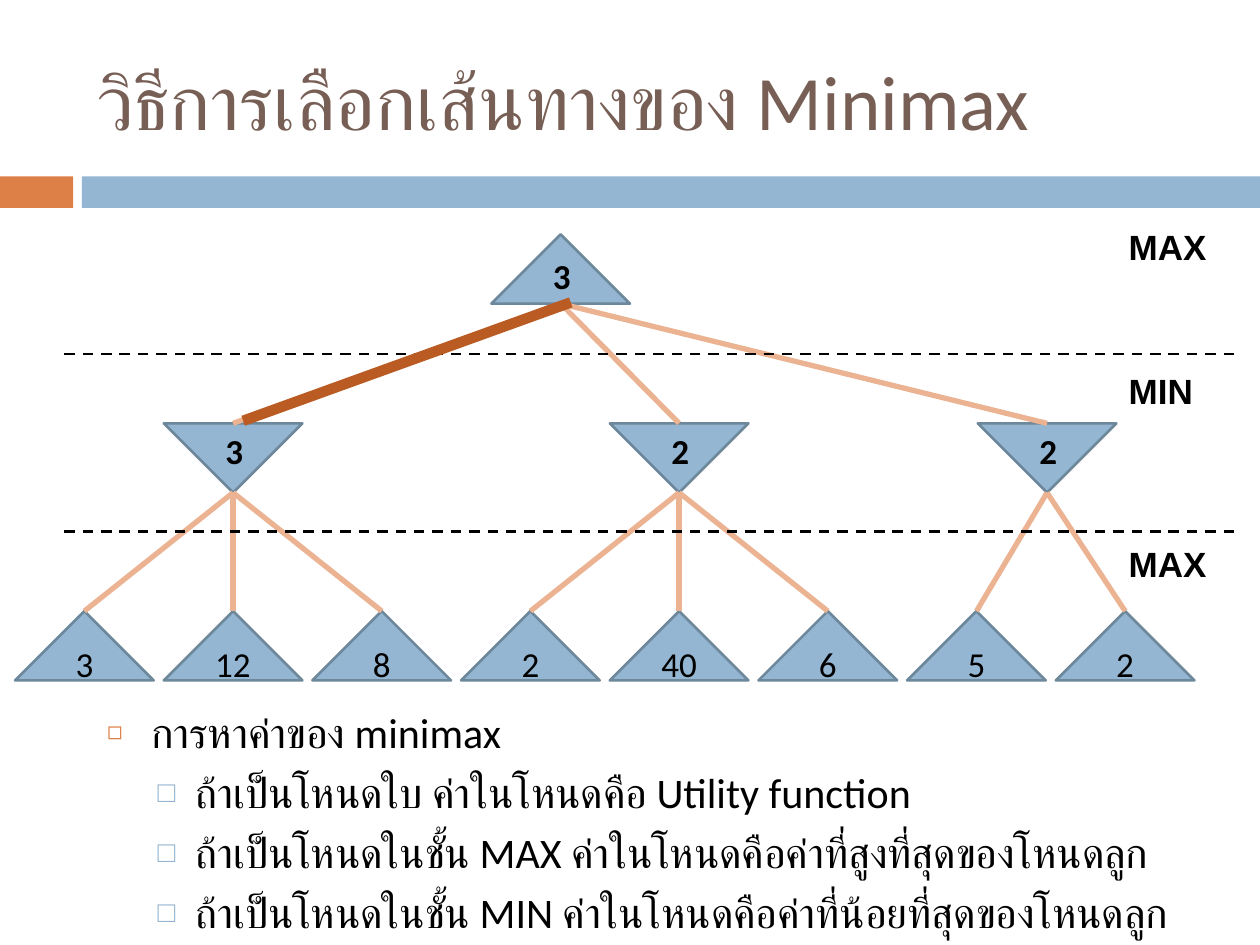
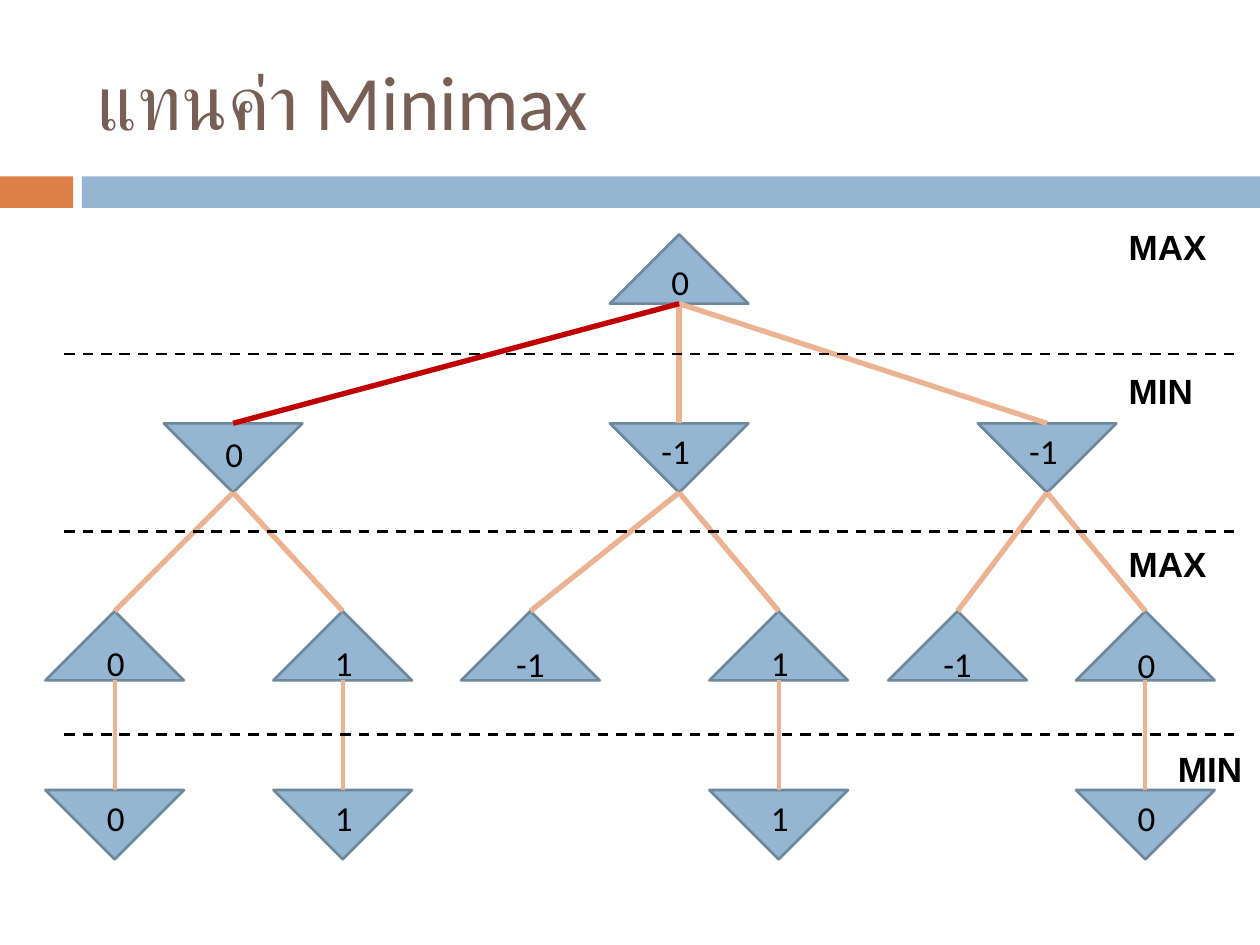
"""Build two slides that show minimax values on game trees."""
from dataclasses import dataclass

from lxml import etree
from pptx import Presentation
from pptx.dml.color import RGBColor
from pptx.enum.dml import MSO_LINE
from pptx.enum.shapes import MSO_CONNECTOR, MSO_SHAPE
from pptx.enum.text import MSO_ANCHOR, MSO_AUTO_SIZE, PP_ALIGN
from pptx.oxml.ns import qn
from pptx.util import Inches, Pt

TRIANGLE, RECTANGLE = MSO_SHAPE.ISOSCELES_TRIANGLE, MSO_SHAPE.RECTANGLE
STRAIGHT, DASH = MSO_CONNECTOR.STRAIGHT, MSO_LINE.DASH
MIDDLE, LEFT, CENTER = MSO_ANCHOR.MIDDLE, PP_ALIGN.LEFT, PP_ALIGN.CENTER
NO_AUTOFIT = MSO_AUTO_SIZE.NONE


@dataclass(frozen=True)
class Theme:
    """Colours, fonts and type sizes."""
    orange: str = "DD8047"
    blue: str = "94B6D2"
    outline: str = "6D879B"
    branch: str = "EBB391"
    brown: str = "775F55"
    black: str = "000000"
    text_font: str = "Calibri"
    label_font: str = "Arial"
    title_size: int = 44
    body_size: int = 24
    label_size: int = 20


theme = Theme()
title_format = {"name": theme.text_font, "size": Pt(theme.title_size), "bold": False}
body_format = {"name": theme.text_font, "size": Pt(theme.body_size)}
value_format = {"name": theme.text_font, "size": Pt(theme.label_size)}
level_format = {"name": theme.label_font, "size": Pt(theme.label_size), "bold": True}


def write(paragraph, text, formats, color=theme.black):
    run = paragraph.add_run()
    run.text = text
    for attribute, value in formats.items():
        setattr(run.font, attribute, value)
    run.font.color.rgb = RGBColor.from_string(color)
    properties = run._r.get_or_add_rPr()
    etree.SubElement(properties, qn("a:cs"), typeface=formats["name"])


def add_line(slide, start, end, color, width, dash=None):
    points = [Inches(length) for length in (*start, *end)]
    connector = slide.shapes.add_connector(STRAIGHT, *points)
    connector.line.color.rgb = RGBColor.from_string(color)
    connector.line.width = Pt(width)
    if dash:
        connector.line.dash_style = dash
    etree.SubElement(connector._element.spPr, qn("a:effectLst"))


NODE_WIDTH, NODE_HEIGHT = 1.1, 0.55
LEVEL_TOPS = [1.86, 3.36, 4.85, 6.27]
LEFT_NODE, MIDDLE_NODE, RIGHT_NODE = 1.85, 5.39, 8.31
LEAF_START, LEAF_STEP = 0.67, 1.18

leaf_values = ["3", "12", "8", "2", "40", "6", "5", "2"]
leaf_parents = [LEFT_NODE] * 3 + [MIDDLE_NODE] * 3 + [RIGHT_NODE] * 2
max_min_max = [("MAX", 8.86, 1.74), ("MIN", 8.86, 2.88), ("MAX", 8.86, 4.26)]

# Each node: level, centre, value, label top (None: inside the triangle), parent centre.
trees = [
    {
        "title": "วิธีการเลือกเส้นทางของ Minimax",
        "layout": 1,
        "bold": True,
        "label_width": 0.39,
        "nodes": [
            (0, 4.45, "3", 1.97, None),
            (1, LEFT_NODE, "3", 3.36, 4.45),
            (1, MIDDLE_NODE, "2", 3.36, 4.45),
            (1, RIGHT_NODE, "2", 3.36, 4.45),
        ] + [
            (2, LEAF_START + index * LEAF_STEP, value, None, parent)
            for index, (value, parent) in enumerate(zip(leaf_values, leaf_parents))
        ],
        "dividers": [2.81, 4.22],
        "levels": max_min_max,
        "chosen": ((4.53, 2.4), (1.93, 3.34), "B95B22", 6),
        "list": [
            (0, "การหาค่าของ minimax"),
            (1, "ถ้าเป็นโหนดใบ ค่าในโหนดคือ Utility function"),
            (1, "ถ้าเป็นโหนดในชั้น MAX ค่าในโหนดคือค่าที่สูงที่สุดของโหนดลูก"),
            (1, "ถ้าเป็นโหนดในชั้น MIN ค่าในโหนดคือค่าที่น้อยที่สุดของโหนดลูก"),
        ],
    },
    {
        "title": "แทนค่า Minimax",
        "layout": 5,
        "bold": False,
        "label_width": 0.55,
        "nodes": [
            (0, MIDDLE_NODE, "0", 2.02, None),
            (1, LEFT_NODE, "0", 3.38, MIDDLE_NODE),
            (1, MIDDLE_NODE, "-1", 3.36, MIDDLE_NODE),
            (1, RIGHT_NODE, "-1", 3.36, MIDDLE_NODE),
            (2, 0.91, "0", 5.04, LEFT_NODE),
            (2, 2.72, "1", 5.04, LEFT_NODE),
            (2, 4.21, "-1", None, MIDDLE_NODE),
            (2, 6.18, "1", 5.04, MIDDLE_NODE),
            (2, 7.6, "-1", None, RIGHT_NODE),
            (2, 9.09, "0", 5.06, RIGHT_NODE),
            (3, 0.91, "0", 6.27, 0.91),
            (3, 2.72, "1", 6.27, 2.72),
            (3, 6.18, "1", 6.27, 6.18),
            (3, 9.09, "0", 6.27, 9.09),
        ],
        "dividers": [2.81, 4.22, 5.83],
        "levels": max_min_max + [("MIN", 9.25, 5.88)],
        "chosen": ((MIDDLE_NODE, 2.41), (LEFT_NODE, 3.36), "C00000", 3),
        "list": [],
    },
]
bullets = [
    {"char": "◻", "color": theme.orange, "size": "60000", "margin": 0.35, "hang": 0.35, "before": 7},
    {"char": "□", "color": theme.blue, "size": "70000", "margin": 0.7, "hang": 0.3, "before": 5.5},
]

presentation = Presentation()
presentation.slide_width, presentation.slide_height = Inches(10), Inches(7.5)
master = presentation.slide_master
master_title = master.placeholders[0]
for attribute, length in {"left": 0.67, "top": 0.25, "width": 8.92, "height": 1.08}.items():
    setattr(master_title, attribute, Inches(length))

slides = [presentation.slides.add_slide(presentation.slide_layouts[tree["layout"]]) for tree in trees]

for left, width, color in [(0, 0.58, theme.orange), (0.65, 9.35, theme.blue)]:
    band = slides[0].shapes.add_shape(RECTANGLE, Inches(left), Inches(1.4), Inches(width), Inches(0.25))
    band.shadow.inherit = False
    band.fill.solid()
    band.fill.fore_color.rgb = RGBColor.from_string(color)
    band.line.fill.background()
    master.shapes._spTree.append(band._element)

for slide, tree in zip(slides, trees):
    title_frame = slide.shapes.title.text_frame
    title_frame.auto_size = NO_AUTOFIT
    title_frame.vertical_anchor = MIDDLE
    title_frame.paragraphs[0].alignment = LEFT
    write(title_frame.paragraphs[0], tree["title"], title_format, theme.brown)

    if tree["list"]:
        body = slide.placeholders[1]
        for attribute, length in {"left": 0.75, "top": 5.56, "width": 8.92, "height": 1.42}.items():
            setattr(body, attribute, Inches(length))
        body.text_frame.auto_size = NO_AUTOFIT
    for index, (level, text) in enumerate(tree["list"]):
        paragraph = body.text_frame.paragraphs[0] if index == 0 else body.text_frame.add_paragraph()
        bullet = bullets[level]
        paragraph.level = level
        paragraph.space_before = Pt(bullet["before"])
        properties = paragraph._p.get_or_add_pPr()
        properties.set("marL", str(Inches(bullet["margin"])))
        properties.set("indent", str(-Inches(bullet["hang"])))
        bullet_color = etree.SubElement(properties, qn("a:buClr"))
        etree.SubElement(bullet_color, qn("a:srgbClr"), val=bullet["color"])
        etree.SubElement(properties, qn("a:buSzPct"), val=bullet["size"])
        etree.SubElement(properties, qn("a:buChar"), char=bullet["char"])
        write(paragraph, text, body_format)

    for level, center, value, label_top, parent in tree["nodes"]:
        node = slide.shapes.add_shape(
            TRIANGLE, Inches(center - NODE_WIDTH / 2), Inches(LEVEL_TOPS[level]),
            Inches(NODE_WIDTH), Inches(NODE_HEIGHT))
        node.rotation = 180 if level % 2 else 0
        node.shadow.inherit = False
        node.fill.solid()
        node.fill.fore_color.rgb = RGBColor.from_string(theme.blue)
        node.line.color.rgb = RGBColor.from_string(theme.outline)
        node.line.width = Pt(1.5)
        if label_top is None:
            node.text_frame.vertical_anchor = MIDDLE
            node.text_frame.paragraphs[0].alignment = CENTER
            write(node.text_frame.paragraphs[0], value, value_format)

    for level, center, value, label_top, parent in tree["nodes"]:
        if parent is not None:
            start = (parent, LEVEL_TOPS[level - 1] + NODE_HEIGHT)
            add_line(slide, start, (center, LEVEL_TOPS[level]), theme.branch, 2.25 if level == 3 else 3)

    for top in tree["dividers"]:
        add_line(slide, (0.51, top), (9.8, top), theme.black, 1.5, DASH)

    labels = [(text, left, top, 1.26 if left < 9 else 0.94, level_format) for text, left, top in tree["levels"]]
    for level, center, value, label_top, parent in tree["nodes"]:
        if label_top is not None:
            left = center - (0.24 if value.startswith("-") else 0.16)
            labels.append((value, left, label_top, tree["label_width"], {**value_format, "bold": tree["bold"]}))
    for text, left, top, width, formats in labels:
        label = slide.shapes.add_textbox(Inches(left), Inches(top), Inches(width), Inches(0.44))
        label.text_frame.word_wrap = True
        write(label.text_frame.paragraphs[0], text, formats)

    add_line(slide, *tree["chosen"])

presentation.save("out.pptx")
